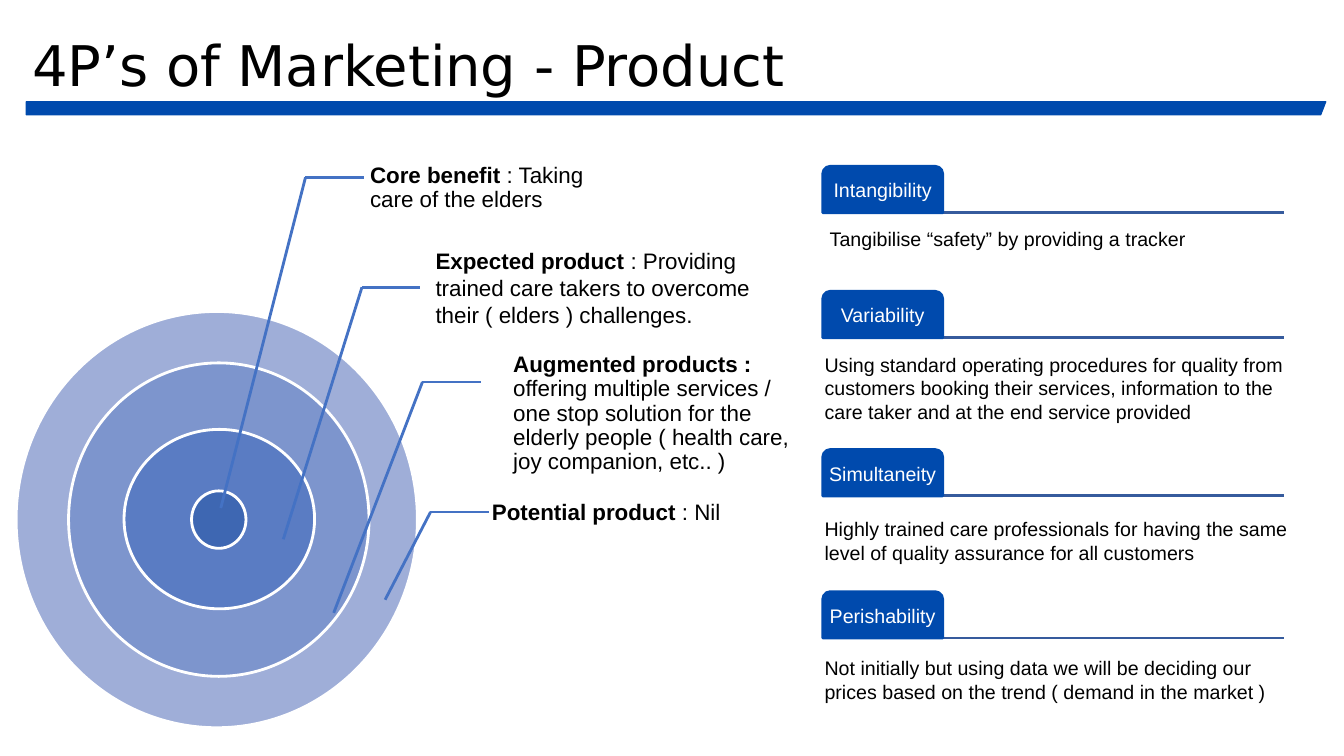
from dataclasses import dataclass

from lxml import etree
from pptx import Presentation
from pptx.dml.color import RGBColor
from pptx.enum.shapes import MSO_CONNECTOR, MSO_SHAPE
from pptx.enum.text import MSO_ANCHOR, PP_ALIGN
from pptx.oxml.ns import qn
from pptx.util import Inches, Pt

STRAIGHT = MSO_CONNECTOR.STRAIGHT
OVAL = MSO_SHAPE.OVAL
TAB = MSO_SHAPE.ROUND_2_SAME_RECTANGLE
TOP, MIDDLE = MSO_ANCHOR.TOP, MSO_ANCHOR.MIDDLE
LEFT, CENTER = PP_ALIGN.LEFT, PP_ALIGN.CENTER


@dataclass(frozen=True)
class Theme:
    title_font: str = "DejaVu Sans"
    body_font: str = "Arial"
    title_size: int = 40
    label_size: int = 16
    body_size: int = 14
    line_width: float = 2
    text: str = "000000"
    light: str = "FFFFFF"
    brand: str = "004AAD"
    rule: str = "365B9D"
    leader: str = "4472C4"
    rings: tuple = ("9FAED8", "7D95CD", "5A7CC3", "3E67B2")


THEME = Theme()

# Offsets inside the ring diagram: left, top, width, height
RINGS = [
    (0, 1.78, 3.98, 4.13),
    (0.52, 2.29, 2.98, 3.11),
    (1.07, 2.95, 1.89, 1.78),
    (1.74, 3.56, 0.54, 0.57),
]
# Heading, text, label (left, top, width), line spacing, leader elbow, leader end
LEVELS = [
    ("Core benefit ", ": Taking care of the elders",
     (3.39, 0, 2.31), 0.9, (2.87, 0.45), (2.03, 3.73)),
    ("Expected product ",
     ": Providing trained care takers to overcome their ( elders ) challenges.",
     (4.04, 0.99, 3.37), 1.0, (3.43, 1.54), (2.65, 4.04)),
    ("Augmented products : ",
     "offering multiple services / one stop solution for the elderly people "
     "( health care, joy companion, etc.. )",
     (4.81, 2.24, 2.89), 0.9, (4.03, 2.48), (3.15, 4.77)),
    ("Potential product ", ": Nil",
     (4.6, 3.23, 2.9), 0.9, (4.11, 3.77), (3.66, 4.64)),
]
LABEL_HEIGHT = 1.11
LEADER_LENGTH = 0.58

# Name, text, top of the tab, drop from tab to text, extra text indent
TRAITS = [
    ("Intangibility", "Tangibilise “safety” by providing a tracker",
     0, 0.55, 0.05),
    ("Variability",
     "Using standard operating procedures for quality from customers booking "
     "their services, information to the care taker and at the end service provided",
     1.24, 0.56, 0),
    ("Simultaneity",
     "Highly trained care professionals for having the same level of quality "
     "assurance for all customers",
     2.81, 0.62, 0),
    ("Perishability",
     "Not initially but using data we will be deciding our prices based on the "
     "trend ( demand in the market )",
     4.22, 0.59, 0),
]
TAB_WIDTH, TAB_HEIGHT = 1.19, 0.46


def color(value):
    return RGBColor.from_string(value)


def write(frame, runs, size, ink=THEME.text, font=THEME.body_font, align=LEFT,
          anchor=TOP, insets=(0.1, 0.05, 0.1, 0.05), spacing=1.0):
    """Fill a text frame with one paragraph of (text, bold) runs."""
    frame.word_wrap = True
    frame.vertical_anchor = anchor
    (frame.margin_left, frame.margin_top,
     frame.margin_right, frame.margin_bottom) = map(Inches, insets)
    paragraph = frame.paragraphs[0]
    paragraph.alignment = align
    paragraph.line_spacing = spacing
    paragraph.font.name = font
    paragraph.font.size = Pt(size)
    paragraph.font.color.rgb = color(ink)
    for text, bold in runs:
        run = paragraph.add_run()
        run.text = text
        if bold:
            run.font.bold = True


def add_text(slide, box, runs, size, **style):
    shape = slide.shapes.add_textbox(*map(Inches, box))
    write(shape.text_frame, runs, size, **style)


def paint(shape, fill, line, width=THEME.line_width):
    shape.shadow.inherit = False
    shape.fill.solid()
    shape.fill.fore_color.rgb = color(fill)
    shape.line.color.rgb = color(line)
    shape.line.width = Pt(width)


def add_line(slide, start, end, ink):
    line = slide.shapes.add_connector(STRAIGHT, *map(Inches, (*start, *end)))
    line.line.color.rgb = color(ink)
    line.line.width = Pt(THEME.line_width)
    etree.SubElement(line._element.spPr, qn("a:effectLst"))


def add_header(slide, left, top, width):
    add_text(slide, (left - 0.04, top, width, 0.77),
             [("4P’s of Marketing - Product", False)],
             THEME.title_size, font=THEME.title_font)
    bar_top, bar_bottom, right = top + 0.76, top + 0.89, left + width
    corners = [(right, bar_top), (left, bar_top),
               (left, bar_bottom), (right - 0.05, bar_bottom)]
    points = [(Inches(x), Inches(y)) for x, y in corners]
    builder = slide.shapes.build_freeform(*points[0])
    builder.add_line_segments(points[1:], close=True)
    paint(builder.convert_to_shape(), THEME.brand, THEME.brand, 0.75)


def add_product_levels(slide, left, top):
    """Draw the nested rings with a labelled leader to each level."""
    for (x, y, width, height), fill in zip(RINGS, THEME.rings):
        ring = slide.shapes.add_shape(
            OVAL, *map(Inches, (left + x, top + y, width, height)))
        paint(ring, fill, THEME.light)
    for heading, text, (x, y, width), spacing, elbow, target in LEVELS:
        add_text(slide, (left + x, top + y, width, LABEL_HEIGHT),
                 [(heading, True), (text, False)], THEME.label_size,
                 anchor=MIDDLE, insets=(0.12, 0.02, 0.02, 0.02), spacing=spacing)
        corner = (left + elbow[0], top + elbow[1])
        add_line(slide, corner, (corner[0] + LEADER_LENGTH, corner[1]), THEME.leader)
        add_line(slide, corner, (left + target[0], top + target[1]), THEME.leader)


def add_service_traits(slide, left, top, width):
    """Draw the column of tabs, each with a rule and a text below."""
    for name, text, offset, drop, indent in TRAITS:
        tab_top = top + offset
        base = tab_top + TAB_HEIGHT
        add_line(slide, (left, base), (left + width, base), THEME.rule)
        tab = slide.shapes.add_shape(
            TAB, *map(Inches, (left, tab_top, TAB_WIDTH, TAB_HEIGHT)))
        paint(tab, THEME.brand, THEME.brand)
        write(tab.text_frame, [(name, False)], THEME.body_size, ink=THEME.light,
              align=CENTER, anchor=MIDDLE, insets=(0.03, 0.05, 0.03, 0.03),
              spacing=0.9)
        add_text(slide, (left - 0.08, tab_top + drop, width + 0.23, 0.81),
                 [(text, False)], THEME.body_size,
                 insets=(0.1 + indent, 0.05, 0.1, 0.05))


def main():
    presentation = Presentation()
    presentation.slide_width = Inches(13.33)
    presentation.slide_height = Inches(7.5)
    slide = presentation.slides.add_slide(presentation.slide_layouts[6])
    add_header(slide, 0.26, 0.25, 12.89)
    add_product_levels(slide, 0.16, 1.31)
    add_service_traits(slide, 8.16, 1.65, 4.57)
    presentation.save("out.pptx")


if __name__ == "__main__":
    main()
